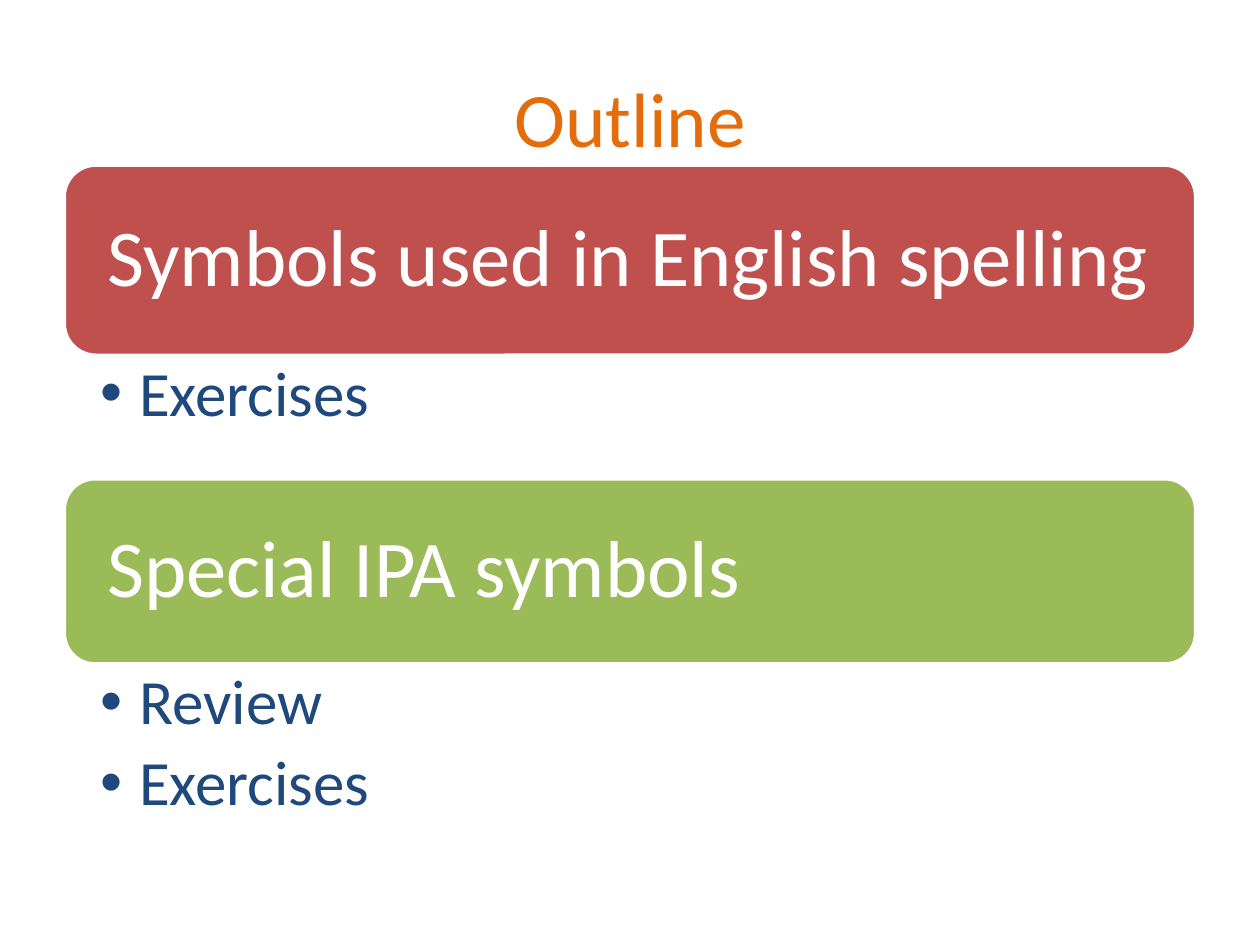
from lxml import etree
from pptx import Presentation
from pptx import util as u
from pptx.dml.color import RGBColor
from pptx.enum import shapes, text
from pptx.oxml.ns import qn


def color(value):
    return RGBColor.from_string(value)


class OutlineSlide:
    font = "Calibri"
    white = "FFFFFF"
    orange = "E46C0A"
    navy = "1F497D"
    left = 0.51
    width = 8.98

    def __init__(self, slide):
        self.slide = slide

    def place(self, box, left, top, width, height):
        box.left, box.top = u.Inches(left), u.Inches(top)
        box.width, box.height = u.Inches(width), u.Inches(height)

    def inset(self, frame, side, edge):
        frame.margin_left = frame.margin_right = u.Inches(side)
        frame.margin_top = frame.margin_bottom = u.Inches(edge)
        frame.word_wrap = True
        frame.auto_size = text.MSO_AUTO_SIZE.NONE

    def add_run(self, paragraph, words, size, hue):
        run = paragraph.add_run()
        run.text = words
        run.font.name = self.font
        run.font.size = u.Pt(size)
        run.font.color.rgb = color(hue)

    def title(self, words):
        heading = self.slide.shapes.title
        self.place(heading, 0.5, 0.3, 9, 1.25)
        frame = heading.text_frame
        frame.vertical_anchor = text.MSO_ANCHOR.MIDDLE
        frame.paragraphs[0].alignment = text.PP_ALIGN.CENTER
        self.add_run(frame.paragraphs[0], words, 44, self.orange)

    def banner(self, words, top, height, fill):
        banner = self.slide.shapes.add_shape(
            shapes.MSO_SHAPE.ROUNDED_RECTANGLE, u.Inches(self.left),
            u.Inches(top), u.Inches(self.width), u.Inches(height))
        banner.shadow.inherit = False
        banner.fill.solid()
        banner.fill.fore_color.rgb = color(fill)
        banner.line.color.rgb = color(self.white)
        banner.line.width = u.Pt(2)
        frame = banner.text_frame
        self.inset(frame, 0.27, 0.27)
        frame.vertical_anchor = text.MSO_ANCHOR.MIDDLE
        paragraph = frame.paragraphs[0]
        paragraph.alignment = text.PP_ALIGN.LEFT
        paragraph.line_spacing = 0.9
        self.add_run(paragraph, words, 46, self.white)

    def bullets(self, placeholder, items, top, height):
        self.place(placeholder, self.left, top, self.width, height)
        frame = placeholder.text_frame
        self.inset(frame, 0.285, 0.05)
        frame.vertical_anchor = text.MSO_ANCHOR.TOP
        for index, item in enumerate(items):
            paragraph = frame.add_paragraph() if index else frame.paragraphs[0]
            paragraph.line_spacing = 0.9
            paragraph.space_before = u.Pt(0)
            paragraph.space_after = u.Pt(7.2)
            properties = paragraph._p.get_or_add_pPr()
            properties.set("marL", str(u.Inches(0.31)))
            properties.set("indent", str(-u.Inches(0.31)))
            etree.SubElement(properties, qn("a:buChar")).set("char", "•")
            self.add_run(paragraph, item, 36, self.navy)


def main():
    deck = Presentation()
    deck.slide_width, deck.slide_height = u.Inches(10), u.Inches(7.5)
    slide = deck.slides.add_slide(deck.slide_layouts[3])
    outline = OutlineSlide(slide)
    outline.title("Outline")
    sections = [
        ("Symbols used in English spelling", "C0504D", 1.51, ["Exercises"], 0.98),
        ("Special IPA symbols", "9BBB59", 1.47, ["Review", "Exercises"], 1.31),
    ]
    top = 1.31
    for number, (topic, fill, height, items, list_height) in enumerate(sections, 1):
        outline.banner(topic, top, height, fill)
        outline.bullets(slide.placeholders[number], items, top + height, list_height)
        top += height + list_height
    deck.save("out.pptx")


if __name__ == "__main__":
    main()
